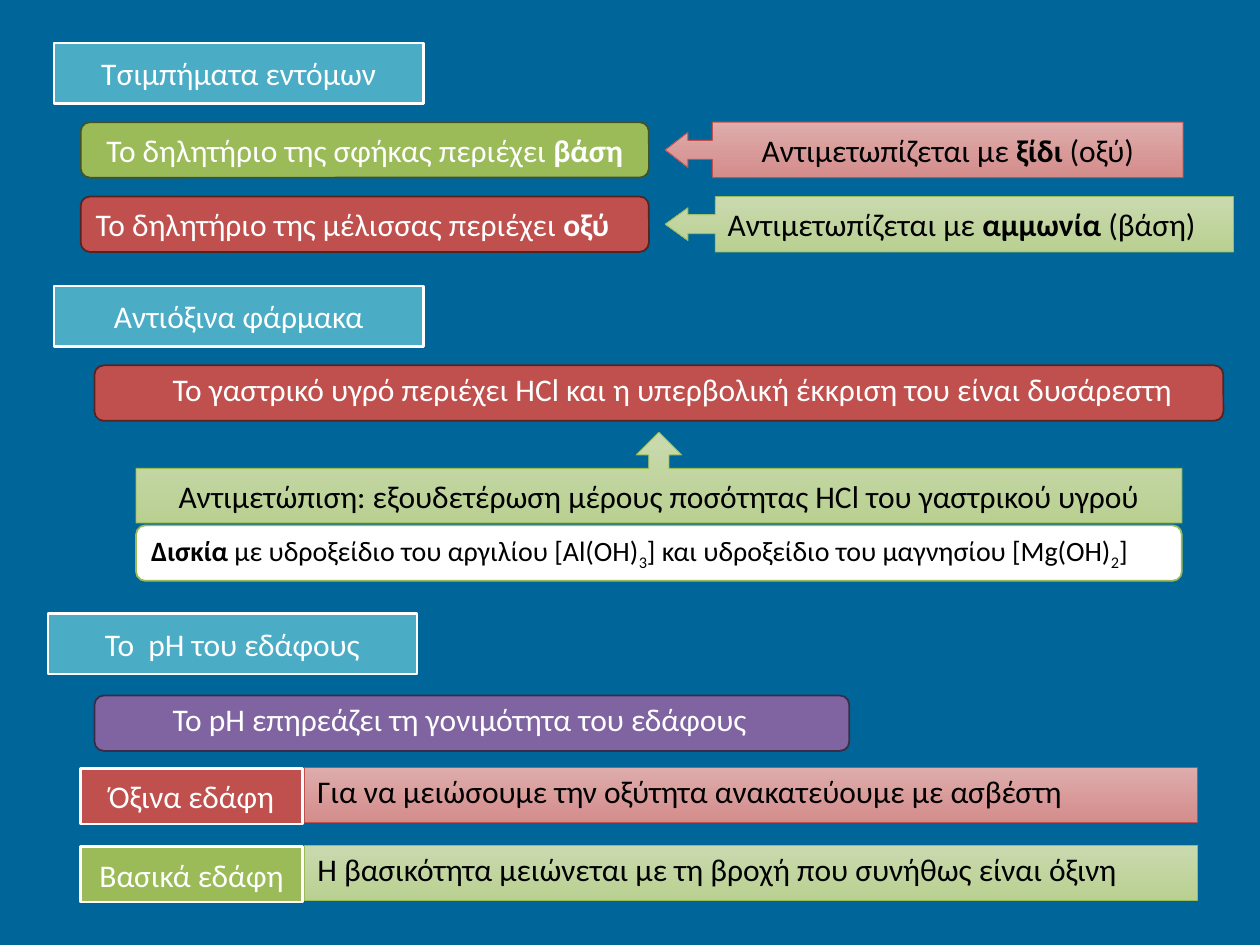
from pptx import Presentation
from pptx.util import Inches, Pt
from pptx.dml.color import RGBColor as Rgb
from pptx.enum.shapes import MSO_SHAPE as Shape
from pptx.enum.text import PP_ALIGN as Align, MSO_ANCHOR as Anchor

THEME = {
    "font": "Calibri", "size": 18, "small": 16, "back": "006699",
    "white": "FFFFFF", "black": "000000",
}
STYLES = {
    "head": ("4BACC6", "FFFFFF", 1.5, "white"),
    "acid": ("C0504D", "542322", 1, "white"),
    "base": ("9BBB59", "445227", 1, "white"),
    "soil": ("8064A2", "382C47", 1, "white"),
    "acid tag": ("C0504D", "FFFFFF", 1.5, "white"),
    "base tag": ("9BBB59", "FFFFFF", 1.5, "white"),
    "pill": ("FFFFFF", "9BBB59", 1, "black"),
    "acid fade": (("DDACAB", "D48D8B"), "C0504D", 0.5, "black"),
    "base fade": (("CADAAF", "B9D091"), "9BBB59", 0.5, "black"),
}
BAR, HEAD = 0.44, (2.93, 0.48)
MID, LEFT = Align.CENTER, Align.LEFT

HEADS = [
    (0.43, 0.34, "Τσιμπήματα εντόμων"),
    (0.43, 2.27, "Αντιόξινα φάρμακα"),
    (0.38, 4.87, "Το  pH του εδάφους"),
]
STINGS = [
    ("base", MID, [("Το δηλητήριο της σφήκας περιέχει ", ""), ("βάση", "bold")],
     "acid fade", 4.11, (0.341, 0.318, 0.409, 0.909),
     [("Αντιμετωπίζεται με ", ""), ("ξίδι", "bold"), (" (οξύ)", "")]),
    ("acid", LEFT, [("Το δηλητήριο της μέλισσας περιέχει ", ""), ("οξύ", "bold")],
     "base fade", 4.51, (0.341, 0.295, 0.409, 0.912),
     [("Αντιμετωπίζεται με ", ""), ("αμμωνία", "bold"), (" (βάση)", "")]),
]
FACTS = [
    ("acid", 2.9, 8.96,
     "Το γαστρικό υγρό περιέχει HCl και η υπερβολική έκκριση του είναι δυσάρεστη"),
    ("soil", 5.52, 5.99, "Το pH επηρεάζει τη γονιμότητα του εδάφους"),
]
PILLS = [
    ("Δισκία", "bold"), (" με υδροξείδιο του αργιλίου [Al(OH)", ""), ("3", "sub"),
    ("] και υδροξείδιο του μαγνησίου [Mg(OH)", ""), ("2", "sub"), ("]", ""),
]
CURE = "Αντιμετώπιση: εξουδετέρωση μέρους ποσότητας HCl του γαστρικού υγρού"
SOILS = [
    ("acid", "Όξινα εδάφη", "Για να μειώσουμε την οξύτητα ανακατεύουμε με ασβέστη"),
    ("base", "Βασικά εδάφη", "Η βασικότητα μειώνεται με τη βροχή που συνήθως είναι όξινη"),
]


def paint(box, style):
    fill, edge, width, ink = STYLES[style]
    box.shadow.inherit = False
    if isinstance(fill, tuple):
        box.fill.gradient()
        box.fill.gradient_angle = 270
        for stop, tone in zip(box.fill.gradient_stops, fill):
            stop.color.rgb = Rgb.from_string(tone)
    else:
        box.fill.solid()
        box.fill.fore_color.rgb = Rgb.from_string(fill)
    box.line.color.rgb = Rgb.from_string(edge)
    box.line.width = Pt(width)
    return Rgb.from_string(THEME[ink])


def add(slide, form, style, at, text, align=MID, tight=False, inset=0,
        size="size", adjust=()):
    box = slide.shapes.add_shape(form, *map(Inches, at))
    for spot, value in enumerate(adjust):
        box.adjustments[spot] = value
    ink = paint(box, style)
    frame = box.text_frame
    frame.word_wrap = True
    frame.vertical_anchor = Anchor.MIDDLE
    para = frame.paragraphs[0]
    para.alignment = align
    font = para.font
    font.name, font.size, font.color.rgb = THEME["font"], Pt(THEME[size]), ink
    if tight:
        para.line_spacing = 0.75
    if inset:
        para.level = 1
        props = para._p.get_or_add_pPr()
        props.set("marL", str(Inches(inset)))
        props.set("indent", "0")
    for words, mark in [(text, "")] if isinstance(text, str) else text:
        run = para.add_run()
        run.text = words
        if mark == "bold":
            run.font.bold = True
        elif mark == "sub":
            run._r.get_or_add_rPr().set("baseline", "-25000")


def main():
    deck = Presentation()
    deck.slide_width, deck.slide_height = Inches(10), Inches(7.5)
    slide = deck.slides.add_slide(deck.slide_layouts[6])
    back = slide.background.fill
    back.solid()
    back.fore_color.rgb = Rgb.from_string(THEME["back"])

    for x, y, text in HEADS:
        add(slide, Shape.RECTANGLE, "head", (x, y, *HEAD), text)

    for row, (kind, align, cause, fade, wide, adjust, cure) in enumerate(STINGS):
        y = 0.97 + 0.59 * row
        add(slide, Shape.ROUNDED_RECTANGLE, kind, (0.64, y, 4.51, BAR), cause, align)
        add(slide, Shape.LEFT_ARROW_CALLOUT, fade, (5.28, y, wide, BAR), cure, align,
            adjust=adjust)

    for kind, y, wide, text in FACTS:
        add(slide, Shape.ROUNDED_RECTANGLE, kind, (0.75, y, wide, BAR), text, LEFT,
            tight=True, inset=0.5)

    add(slide, Shape.ROUNDED_RECTANGLE, "pill", (1.08, 4.17, 8.3, BAR), PILLS, LEFT,
        tight=True, size="small")
    add(slide, Shape.UP_ARROW_CALLOUT, "base fade", (1.08, 3.43, 8.3, 0.72), CURE,
        adjust=(0.222, 0.25, 0.25, 0.6))

    for row, (kind, tag, text) in enumerate(SOILS):
        y = 6.1 + 0.62 * row
        add(slide, Shape.RECTANGLE, kind + " tag", (0.64, y, 1.76, BAR), tag)
        add(slide, Shape.RECTANGLE, kind + " fade", (2.42, y - 0.01, 7.08, BAR), text,
            LEFT, tight=True)

    deck.save("out.pptx")


if __name__ == "__main__":
    main()
